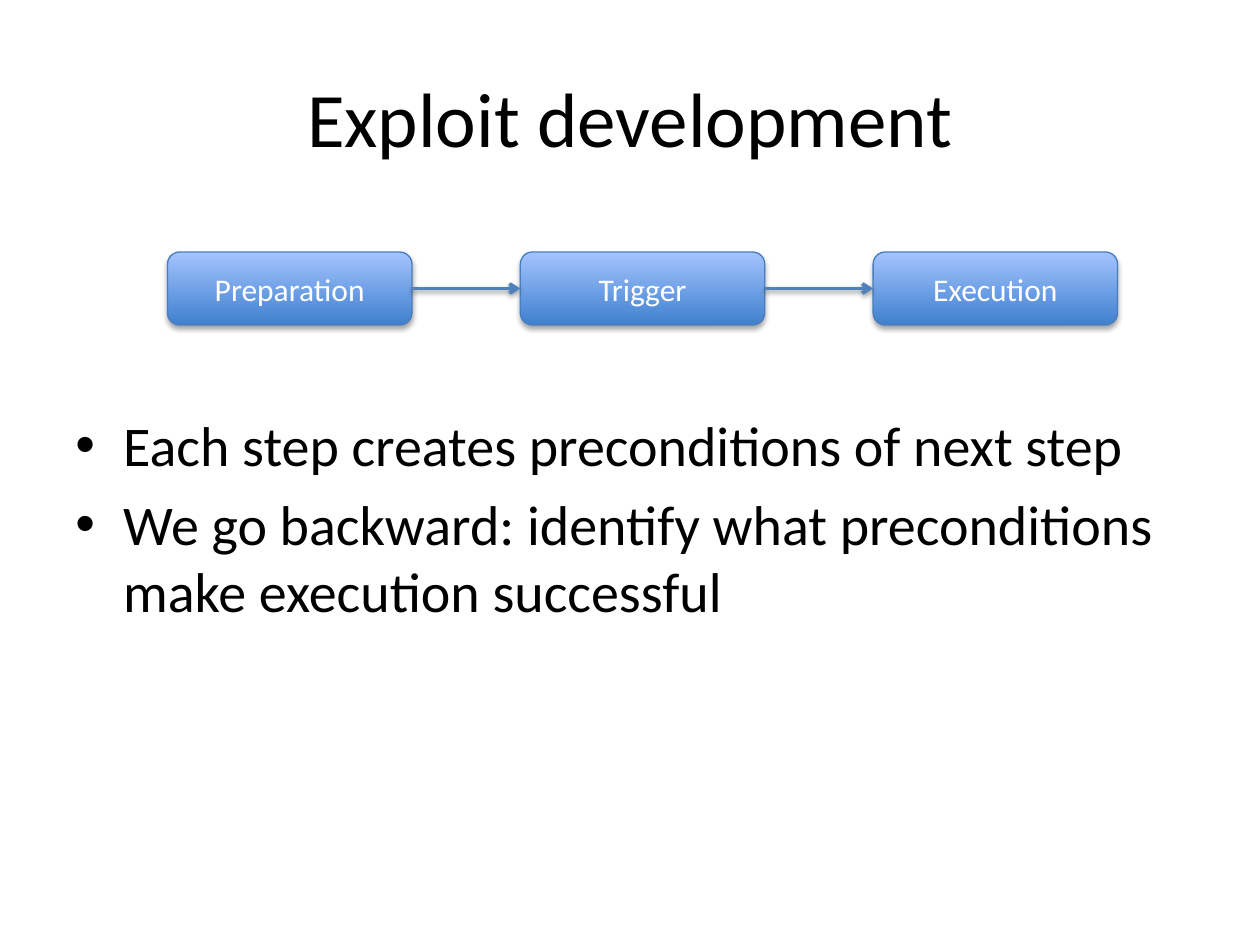
from lxml.etree import SubElement
from pptx import Presentation
from pptx.dml.color import RGBColor
from pptx.enum.shapes import MSO_CONNECTOR, MSO_SHAPE
from pptx.enum.text import MSO_ANCHOR, PP_ALIGN
from pptx.oxml.ns import qn
from pptx.util import Inches, Pt

COLORS = {
    "text": "000000",
    "step_text": "FFFFFF",
    "step_bottom": "3F80CE",
    "step_top": "A4C4FF",
    "step_line": "4B7EBC",
    "arrow": "4F81BD",
    "shadow": "000000",
}
STEPS = ["Preparation", "Trigger", "Execution"]
POINTS = [
    "Each step creates preconditions of next step",
    "We go backward: identify what preconditions make execution successful",
]


def color(name):
    """Return the named colour."""
    return RGBColor.from_string(COLORS[name])


def format_text(p, size, name, align):
    """Format every run of a paragraph."""
    p.alignment = align
    for r in p.runs:
        r.font.name = "Calibri"
        r.font.size = Pt(size)
        r.font.color.rgb = color(name)


def add_shadow(s, distance, opacity):
    """Give a shape or connector a soft shadow below it."""
    effects = SubElement(s._element.spPr, qn("a:effectLst"))
    shadow = SubElement(effects, qn("a:outerShdw"), blurRad=str(Pt(3.1)),
                        dist=str(Pt(distance)), dir="5400000", rotWithShape="0")
    tint = SubElement(shadow, qn("a:srgbClr"), val=COLORS["shadow"])
    SubElement(tint, qn("a:alpha"), val=str(opacity * 1000))


def add_title(slide, text, left, top, width, height):
    """Place and format the title placeholder."""
    sp = slide.shapes.title
    sp.left, sp.top, sp.width, sp.height = map(Inches, (left, top, width, height))
    tf = sp.text_frame
    tf.text = text
    tf.vertical_anchor = MSO_ANCHOR.MIDDLE
    format_text(tf.paragraphs[0], 44, "text", PP_ALIGN.CENTER)


def add_step(slide, text, left, top, width, height):
    """Draw one rounded step box."""
    sp = slide.shapes.add_shape(MSO_SHAPE.ROUNDED_RECTANGLE,
                                *map(Inches, (left, top, width, height)))
    sp.fill.gradient()
    sp.fill.gradient_angle = 90
    for stop, position, name in zip(sp.fill.gradient_stops, (0, 1), ("step_bottom", "step_top")):
        stop.position = position
        stop.color.rgb = color(name)
    sp.line.color.rgb = color("step_line")
    sp.line.width = Pt(0.75)
    add_shadow(sp, 1.8, 35)
    tf = sp.text_frame
    tf.text = text
    tf.vertical_anchor = MSO_ANCHOR.MIDDLE
    format_text(tf.paragraphs[0], 18, "step_text", PP_ALIGN.CENTER)
    return sp


def add_arrow(slide, start, end):
    """Connect the right side of one step to the left side of the next."""
    line = slide.shapes.add_connector(MSO_CONNECTOR.STRAIGHT, 0, 0, 0, 0)
    line.begin_connect(start, 3)
    line.end_connect(end, 1)
    line.line.color.rgb = color("arrow")
    line.line.width = Pt(2)
    SubElement(line.line._get_or_add_ln(), qn("a:tailEnd"), type="arrow")
    add_shadow(line, 1.6, 38)


def add_flow(slide, steps, left, top, width, height, step_width=1.94):
    """Spread the steps evenly over the box and join them with arrows."""
    pitch = (width - step_width) / (len(steps) - 1)
    boxes = [add_step(slide, text, left + i * pitch, top, step_width, height)
             for i, text in enumerate(steps)]
    for start, end in zip(boxes, boxes[1:]):
        add_arrow(slide, start, end)


def add_bullets(slide, points, left, top, width, height):
    """Write the bulleted points."""
    tf = slide.shapes.add_textbox(*map(Inches, (left, top, width, height))).text_frame
    tf.word_wrap = True
    tf.text = "\n".join(points)
    for p in tf.paragraphs:
        format_text(p, 32, "text", PP_ALIGN.LEFT)
        p.space_before = Pt(6.4)
        props = p._p.get_or_add_pPr()
        props.set("marL", str(Inches(0.38)))
        props.set("indent", str(Inches(-0.38)))
        SubElement(props, qn("a:buFont"), typeface="Arial")
        SubElement(props, qn("a:buChar"), char="•")


def main():
    """Build and save the slide."""
    prs = Presentation()
    prs.slide_width, prs.slide_height = Inches(10), Inches(7.5)
    slide = prs.slides.add_slide(prs.slide_layouts[5])
    add_title(slide, "Exploit development", 0.5, 0.3, 9, 1.25)
    add_bullets(slide, POINTS, 0.5, 3.21, 9, 3.49)
    add_flow(slide, STEPS, 1.33, 2, 7.54, 0.58)
    prs.save("out.pptx")


if __name__ == "__main__":
    main()
